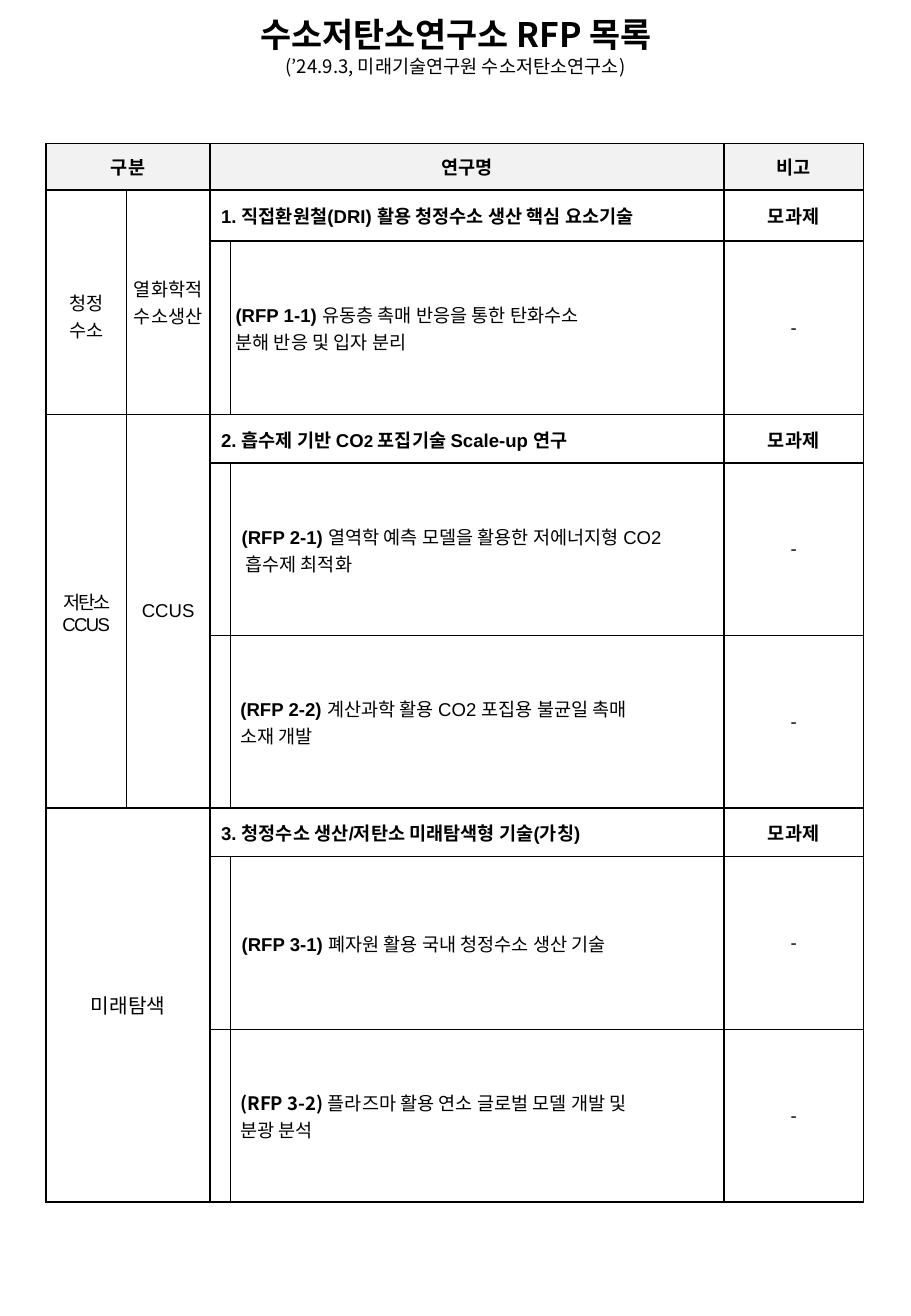
from pptx import Presentation
from pptx import util as u
from pptx.dml.color import RGBColor
from pptx.enum import text
from pptx.oxml.ns import qn
from lxml import etree

# Content
SANS, ARIAL = "Noto Sans CJK KR", "Arial"
BLACK, GREY = "000000", "F2F2F2"
TITLE = "수소저탄소연구소 RFP 목록"
SUBTITLE = "(’24.9.3, 미래기술연구원 수소저탄소연구소)"
HEADERS = [("구분", 0, 2), ("연구명", 2, 2), ("비고", 4, 1)]  # label, column, span

# A run is (text, format); a project is (label, name, left indent, first line, label font)
GROUPS = [
    {"fields": [(["청정", "수소"], {}), (["열화학적 수소생산"], {})],
     "theme": [("1. 직접환원철(DRI) 활용 청정수소 생산 핵심 요소기술", {})],
     "projects": [("(RFP 1-1) ", "유동층 촉매 반응을 통한 탄화수소\v분해 반응 및 입자 분리",
                   0.04, 0, ARIAL)]},
    {"fields": [(["저탄소 CCUS"], {"spacing": -100}), (["CCUS"], {})],
     "theme": [("2. 흡수제 기반 CO", {}), ("2 ", {"size": 10}),
               ("포집기술 Scale-up 연구", {})],
     "projects": [("(RFP 2-1) ", "열역학 예측 모델을 활용한 저에너지형 CO2\v흡수제 최적화",
                   0.12, -0.03, ARIAL),
                  ("(RFP 2-2) ", "계산과학 활용 CO2 포집용 불균일 촉매\v소재 개발",
                   0.08, 0, ARIAL)]},
    {"fields": [(["미래탐색"], {"size": 12})],
     "theme": [("3. 청정수소 생산/저탄소 미래탐색형 기술(가칭)", {})],
     "projects": [("(RFP 3-1) ", "폐자원 활용 국내 청정수소 생산 기술", 0.09, 0, ARIAL),
                  ("(RFP 3-2) ", "플라즈마 활용 연소 글로벌 모델 개발 및\v분광 분석",
                   0.08, 0, SANS)]},
]
THEME_NOTE, PROJECT_NOTE = "모과제", "-"

# Grid
COLUMNS = [0.66, 0.69, 0.17, 4.06, 1.15]
ROWS = [0.38, 0.42, 1.43] + [0.4, 1.42, 1.42] * 2
LEFT, TOP, PADDING, LINE = 0.38, 1.18, 0.08, 0.22
CENTER, START = text.PP_ALIGN.CENTER, text.PP_ALIGN.LEFT


def color(value):
    return RGBColor.from_string(value)


def add_span(para, words, size=11, name=ARIAL, bold=False, spacing=0):
    for index, line in enumerate(words.split("\v")):
        if index:
            para.add_line_break()
        span = para.add_run()
        span.text = line
        for key, value in {"size": u.Pt(size), "name": name, "bold": bold}.items():
            setattr(span.font, key, value)
        span.font.color.rgb = color(BLACK)
        properties = span.font._element
        etree.SubElement(properties, qn("a:ea")).set("typeface", SANS)
        if spacing:
            properties.set("spc", str(spacing))


def fill_cell(cell, paragraphs, align=CENTER, indent=0, first=0):
    frame = cell.text_frame
    for index, spans in enumerate(paragraphs):
        para = frame.add_paragraph() if index else frame.paragraphs[0]
        para.alignment = align
        if indent or first:
            properties = para._p.get_or_add_pPr()
            properties.set("marL", str(u.Inches(indent)))
            properties.set("indent", str(u.Inches(first)))
        for words, look in spans:
            add_span(para, words, **look)


def draw_borders(cell):
    properties = cell._tc.get_or_add_tcPr()
    for index, side in enumerate(("lnL", "lnR", "lnT", "lnB")):
        line = etree.Element(qn("a:" + side), w=str(u.Pt(1)))
        paint = etree.SubElement(line, qn("a:solidFill"))
        etree.SubElement(paint, qn("a:srgbClr"), val=BLACK)
        properties.insert(index, line)


def fill_box(box, place, words, wrap, **look):
    box.left, box.top, box.width, box.height = map(u.Inches, place)
    frame = box.text_frame
    settings = {"word_wrap": wrap, "auto_size": text.MSO_AUTO_SIZE.NONE,
                "vertical_anchor": text.MSO_ANCHOR.TOP}
    for key, value in settings.items():
        setattr(frame, key, value)
    para = frame.paragraphs[0]
    para.alignment = CENTER
    add_span(para, words, name=SANS, **look)


def build_table(page):
    frame = page.shapes.add_table(len(ROWS), len(COLUMNS), u.Inches(LEFT), u.Inches(TOP),
                                  u.Inches(sum(COLUMNS)), u.Inches(sum(ROWS)))
    table = frame.table
    table.first_row = table.horz_banding = False
    for column, width in zip(table.columns, COLUMNS):
        column.width = u.Inches(width)
    for row, height in zip(table.rows, ROWS):
        row.height = u.Inches(height)
    for cell in table.iter_cells():
        cell.margin_left = cell.margin_right = 0
        cell.margin_top = cell.margin_bottom = u.Inches(PADDING)
        cell.vertical_anchor = text.MSO_ANCHOR.MIDDLE
        cell.fill.background()
        draw_borders(cell)

    # Header row
    for label, column, width in HEADERS:
        for offset in range(width):
            cell = table.cell(0, column + offset)
            cell.fill.solid()
            cell.fill.fore_color.rgb = color(GREY)
        cell = table.cell(0, column)
        if width > 1:
            cell.merge(table.cell(0, column + width - 1))
        fill_cell(cell, [[(label, {"name": SANS, "bold": True})]])

    # Groups: fields on the left, then a theme row and its projects
    top = 1
    for group in GROUPS:
        bottom = top + len(group["projects"])
        width = 2 // len(group["fields"])
        for index, (lines, look) in enumerate(group["fields"]):
            cell = table.cell(top, index * width)
            cell.merge(table.cell(bottom, index * width + width - 1))
            fill_cell(cell, [[(line, look)] for line in lines])
            if len(lines) > 1:
                cell.margin_top = u.Inches(PADDING + LINE)
        theme = table.cell(top, 2)
        theme.merge(table.cell(top, 3))
        fill_cell(theme, [[(words, {"bold": True, **look}) for words, look in group["theme"]]],
                  START, 0, 0.09)
        fill_cell(table.cell(top, 4), [[(THEME_NOTE, {"bold": True})]])
        for row, (label, name, indent, first, font) in enumerate(group["projects"], top + 1):
            fill_cell(table.cell(row, 3), [[(label, {"bold": True, "name": font}), (name, {})]],
                      START, indent, first)
            fill_cell(table.cell(row, 4), [[(PROJECT_NOTE, {})]])
        top = bottom + 1


def main():
    deck = Presentation()
    deck.slide_width, deck.slide_height = u.Inches(7.5), u.Inches(10.83)
    page = deck.slides.add_slide(deck.slide_layouts[5])
    build_table(page)
    fill_box(page.shapes.title, (1.9, 0.06, 3.71, 0.44), TITLE, False, size=20, bold=True)
    subtitle = page.shapes.add_textbox(0, 0, 0, 0)
    fill_box(subtitle, (1.18, 0.4, 5.14, 0.29), SUBTITLE, True)
    deck.save("out.pptx")


if __name__ == "__main__":
    main()
